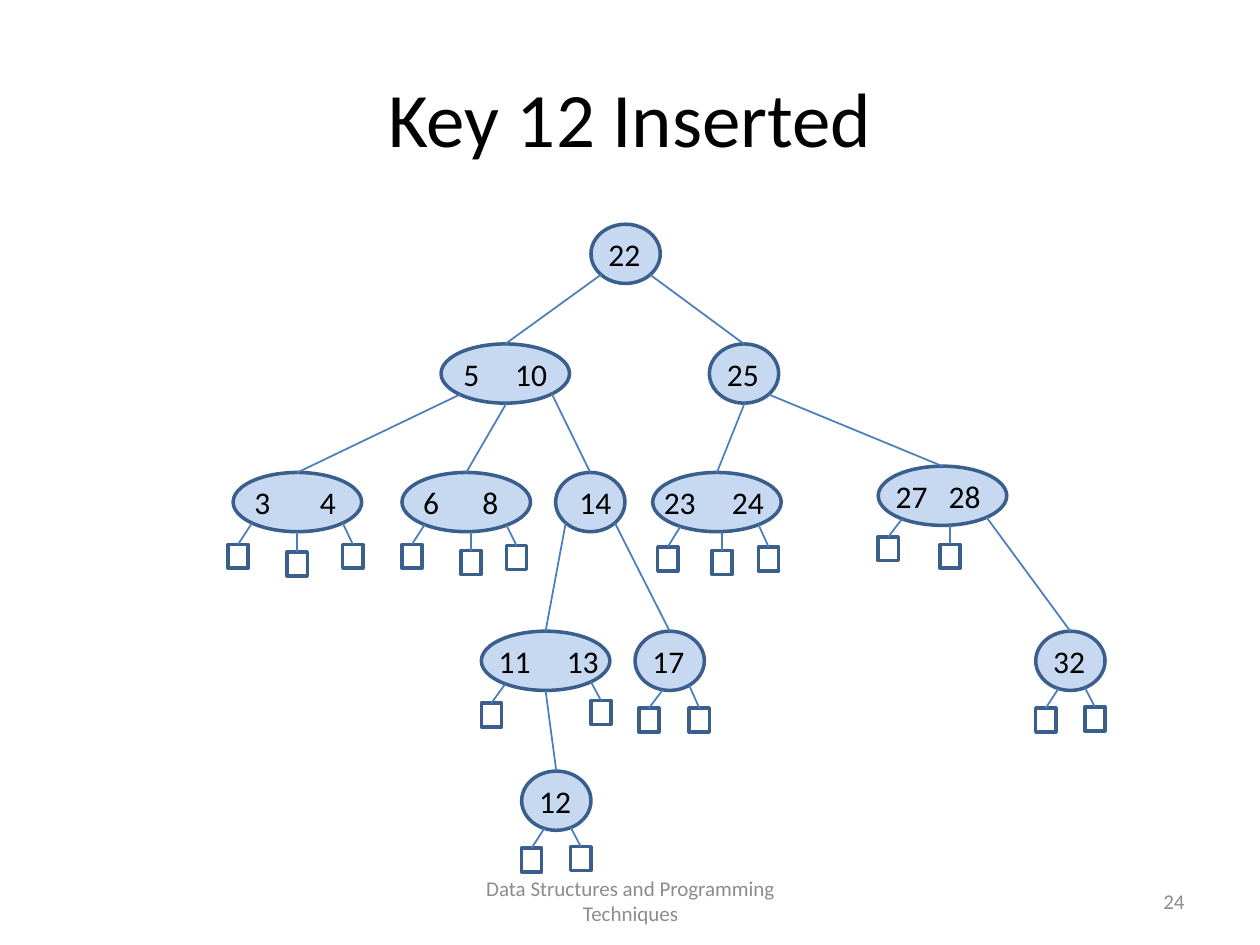
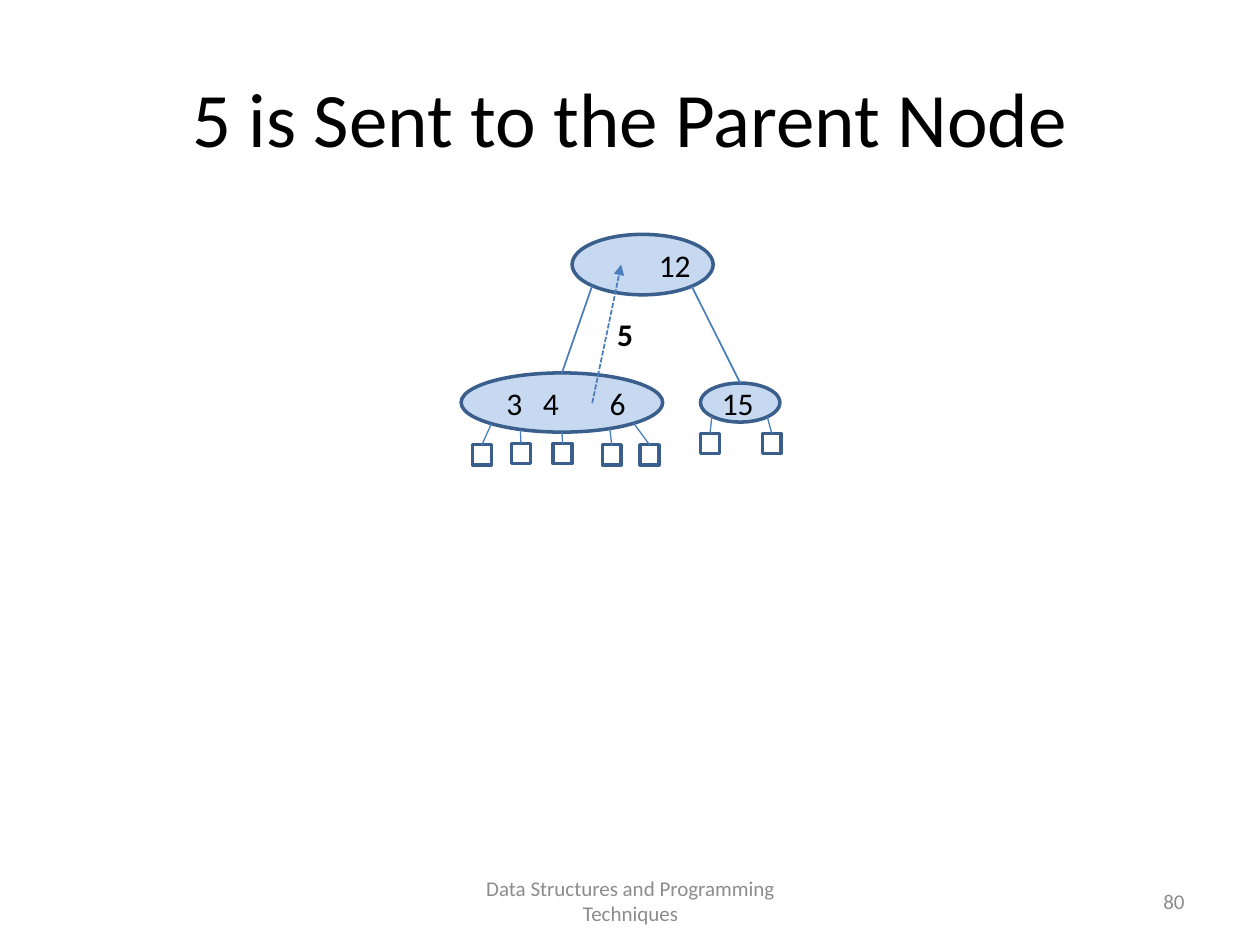
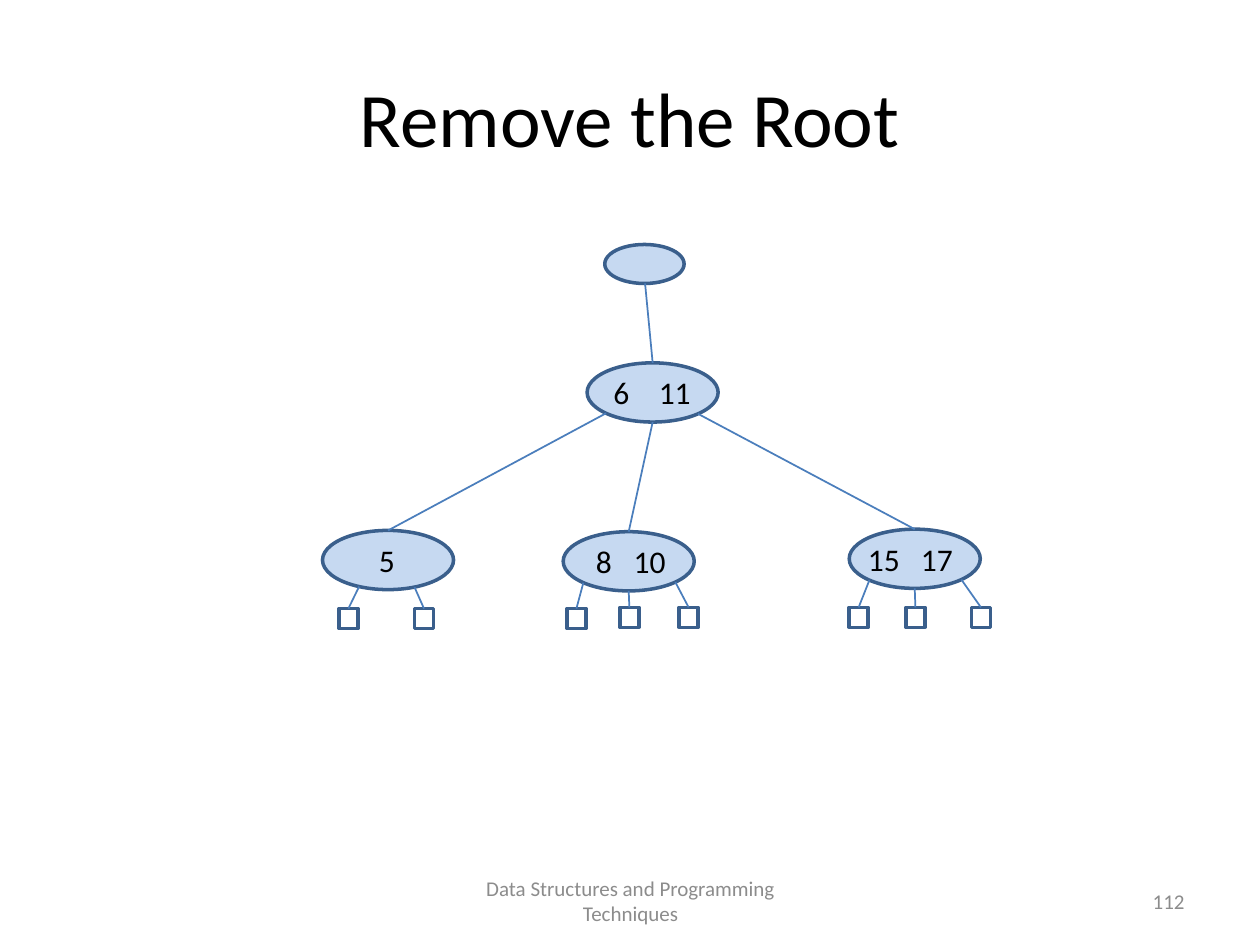
import math
import lxml.etree
import pptx
import pptx.dml.color
import pptx.enum.dml
import pptx.enum.shapes
import pptx.enum.text
import pptx.oxml.ns
import pptx.util

Inches, Pt = pptx.util.Inches, pptx.util.Pt
ALIGN = pptx.enum.text.PP_ALIGN
MIDDLE = pptx.enum.text.MSO_ANCHOR.MIDDLE
SHAPE = pptx.enum.shapes.MSO_SHAPE

FONT = "Calibri"
BLACK, GREY = "000000", "8C8C8C"
NODE_FILL, OUTLINE, LINK = "C6D9F1", "3A5F8C", "4B7EBC"
FOOTER = "Data Structures and Programming Techniques"
INSET = 0.1
KEY_HEIGHT = 0.4
DIGIT_WIDTH = 0.13

ROUND, WIDE = (0.55, 0.47), (1.02, 0.47)
BROAD, FLAT = (1.04, 0.47), (0.63, 0.31)

# nodes: keys -> (left, top), size, left end of each key
# edges: parent, x where the edge leaves the parent, child
# leaves: parent -> (x where the link leaves the parent, leaf left, leaf top)
TREES = [
    {
        "title": "Key 12 Inserted", "number": "24",
        "leaf_size": (0.16, 0.19), "leaf_link": 1,
        "nodes": {
            "22": ((4.69, 1.78), ROUND, [4.83]),
            "5 10": ((3.5, 2.73), WIDE, [3.68, 4.09]),
            "25": ((5.63, 2.73), ROUND, [5.77]),
            "3 4": ((1.85, 3.75), WIDE, [2.02, 2.54]),
            "6 8": ((3.19, 3.75), WIDE, [3.36, 3.83]),
            "14": ((4.41, 3.75), ROUND, [4.6]),
            "23 24": ((5.18, 3.75), WIDE, [5.27, 5.81]),
            "27 28": ((6.97, 3.7), WIDE, [7.11, 7.53]),
            "11 13": ((3.82, 5.01), WIDE, [3.96, 4.5]),
            "17": ((5.04, 5.01), ROUND, [5.18]),
            "32": ((8.22, 5.01), ROUND, [8.36]),
            "12": ((4.14, 6.12), ROUND, [4.28]),
        },
        "edges": [
            ("22", 4.77, "5 10"), ("22", 5.16, "25"),
            ("5 10", 3.65, "3 4"), ("5 10", 4.02, "6 8"), ("5 10", 4.38, "14"),
            ("25", 5.91, "23 24"), ("25", 6.1, "27 28"),
            ("14", 4.49, "11 13"), ("14", 4.88, "17"),
            ("27 28", 7.83, "32"), ("11 13", 4.33, "12"),
        ],
        "leaves": {
            "3 4": [(2, 1.81, 4.32), (2.36, 2.28, 4.38), (2.72, 2.72, 4.32)],
            "6 8": [(3.37, 3.19, 4.32), (3.74, 3.66, 4.37), (4.02, 4.02, 4.33)],
            "23 24": [(5.4, 5.22, 4.34), (5.73, 5.65, 4.37), (6.02, 6.02, 4.34)],
            "27 28": [(7.16, 6.97, 4.26), (7.54, 7.46, 4.32)],
            "11 13": [(4.01, 3.82, 5.58), (4.69, 4.69, 5.56)],
            "17": [(5.26, 5.07, 5.62), (5.47, 5.47, 5.62)],
            "32": [(8.4, 8.22, 5.62), (8.61, 8.61, 5.61)],
            "12": [(4.32, 4.14, 6.73), (4.53, 4.53, 6.72)],
        },
    },
    {
        "title": "5 is Sent to the Parent Node", "number": "80",
        "leaf_size": (0.15, 0.16), "leaf_link": 0.75,
        "nodes": {
            "12": ((4.54, 1.86), (1.12, 0.48), [5.23]),
            "3 4 6": ((3.66, 2.96), (1.6, 0.47), [4.02, 4.31, 4.84]),
            "15": ((5.56, 3.04), FLAT, [5.73]),
        },
        "edges": [("12", 4.7, "3 4 6"), ("12", 5.49, "15")],
        "leaves": {
            "3 4 6": [(3.9, 3.75, 3.53), (4.13, 4.06, 3.52), (4.46, 4.39, 3.52),
                      (4.84, 4.78, 3.53), (5.03, 5.08, 3.53)],
            "15": [(5.65, 5.56, 3.44), (6.09, 6.05, 3.44)],
        },
        "moved_key": {"key": "5", "at": (4.9, 2.45),
                      "start": (4.7, 3.2), "end": (4.93, 2.1)},
    },
    {
        "title": "Remove the Root", "number": "112",
        "leaf_size": (0.15, 0.16), "leaf_link": 1,
        "nodes": {
            "": ((4.8, 1.94), FLAT, []),
            "6 11": ((4.66, 2.88), BROAD, [4.87, 5.23]),
            "5": ((2.56, 4.21), BROAD, [3.01]),
            "8 10": ((4.47, 4.22), BROAD, [4.73, 5.03]),
            "15 17": ((6.74, 4.2), BROAD, [6.89, 7.31]),
        },
        "edges": [("", 5.12, "6 11"), ("6 11", 4.81, "5"),
                  ("6 11", 5.18, "8 10"), ("6 11", 5.54, "15 17")],
        "leaves": {
            "5": [(2.85, 2.69, 4.83), (3.29, 3.29, 4.83)],
            "8 10": [(4.63, 4.5, 4.83), (4.99, 4.92, 4.82), (5.36, 5.39, 4.82)],
            "15 17": [(6.9, 6.74, 4.82), (7.26, 7.19, 4.82), (7.63, 7.71, 4.82)],
        },
    },
]


def colour(value):
    return pptx.dml.color.RGBColor.from_string(value)


def add_xml(parent, tag, **attributes):
    return lxml.etree.SubElement(parent, pptx.oxml.ns.qn(tag), attributes)


def write(frame, text, size, ink=BLACK, align=ALIGN.LEFT, bold=False):
    frame.word_wrap = True
    frame.text = text
    paragraph = frame.paragraphs[0]
    paragraph.alignment = align
    for run in paragraph.runs:
        run.font.name, run.font.size, run.font.bold = FONT, Pt(size), bold
        run.font.color.rgb = colour(ink)
    return paragraph


def add_text(slide, box, text, size, **style):
    frame = slide.shapes.add_textbox(*map(Inches, box)).text_frame
    return frame, write(frame, text, size, **style)


def add_outlined(slide, kind, at, size, fill=None):
    shape = slide.shapes.add_shape(kind, *map(Inches, at + size))
    shape.shadow.inherit = False
    if fill:
        shape.fill.solid()
        shape.fill.fore_color.rgb = colour(fill)
    else:
        shape.fill.background()
    shape.line.color.rgb = colour(OUTLINE)
    shape.line.width = Pt(2)
    return shape


def add_link(slide, start, end, width=1):
    link = slide.shapes.add_connector(
        pptx.enum.shapes.MSO_CONNECTOR.STRAIGHT, *map(Inches, start + end))
    link.line.color.rgb = colour(LINK)
    link.line.width = Pt(width)
    add_xml(link._element.spPr, "a:effectLst")
    return link


def link_to_top(slide, start, child, width=1):
    add_link(slide, start, start, width).end_connect(child, 0)


def lower_edge(node, x):
    """Point at x on the lower half of a node's ellipse."""
    (left, top), (width, height), _ = node
    reach = (x - left - width / 2) / (width / 2)
    return x, top + height / 2 * (1 + math.sqrt(1 - reach ** 2))


def add_keys(slide, keys, key_lefts, top, bold=False):
    """One line of keys, each after the first set by a tab stop."""
    first = key_lefts[0]
    width = key_lefts[-1] - first + DIGIT_WIDTH * len(keys[-1]) + 2 * INSET + 0.03
    _, line = add_text(slide, (first - INSET, top, width, KEY_HEIGHT),
                       "\t".join(keys), 18, bold=bold)
    if len(keys) > 1:
        stops = add_xml(line._p.get_or_add_pPr(), "a:tabLst")
        for left in key_lefts[1:]:
            add_xml(stops, "a:tab", pos=str(Inches(left - first)), algn="l")


def add_frame(slide, title, number):
    heading = slide.shapes.title
    heading.left, heading.top, heading.width, heading.height = map(
        Inches, (0.5, 0.3, 9, 1.25))
    write(heading.text_frame, title, 44, align=ALIGN.CENTER)
    heading.text_frame.vertical_anchor = MIDDLE
    for left, width, text, align in ((3.42, 3.17, FOOTER, ALIGN.CENTER),
                                     (7.17, 2.33, number, ALIGN.RIGHT)):
        frame, _ = add_text(slide, (left, 6.95, width, 0.4), text, 12,
                            ink=GREY, align=align)
        frame.vertical_anchor = MIDDLE


def add_tree(slide, tree):
    nodes = tree["nodes"]
    ellipses = {keys: add_outlined(slide, SHAPE.OVAL, at, size, NODE_FILL)
                for keys, (at, size, _) in nodes.items()}

    # Edges and empty leaves
    for parent, x, child in tree["edges"]:
        link_to_top(slide, lower_edge(nodes[parent], x), ellipses[child])
    for parent, leaves in tree["leaves"].items():
        for x, left, top in leaves:
            leaf = add_outlined(slide, SHAPE.RECTANGLE, (left, top), tree["leaf_size"])
            link_to_top(slide, lower_edge(nodes[parent], x), leaf, tree["leaf_link"])

    # Keys
    for keys, ((_, top), (_, height), key_lefts) in nodes.items():
        if keys:
            add_keys(slide, keys.split(), key_lefts, top + (height - KEY_HEIGHT) / 2)


def add_moved_key(slide, key, at, start, end):
    arrow = add_link(slide, start, end)
    arrow.line.dash_style = pptx.enum.dml.MSO_LINE.SQUARE_DOT
    add_xml(arrow.line._get_or_add_ln(), "a:tailEnd", type="triangle")
    add_keys(slide, [key], [at[0]], at[1], bold=True)


def main():
    deck = pptx.Presentation()
    deck.slide_width, deck.slide_height = Inches(10), Inches(7.5)
    title_only = deck.slide_layouts[5]
    for tree in TREES:
        slide = deck.slides.add_slide(title_only)
        add_frame(slide, tree["title"], tree["number"])
        add_tree(slide, tree)
        if "moved_key" in tree:
            add_moved_key(slide, **tree["moved_key"])
    deck.save("out.pptx")


if __name__ == "__main__":
    main()
